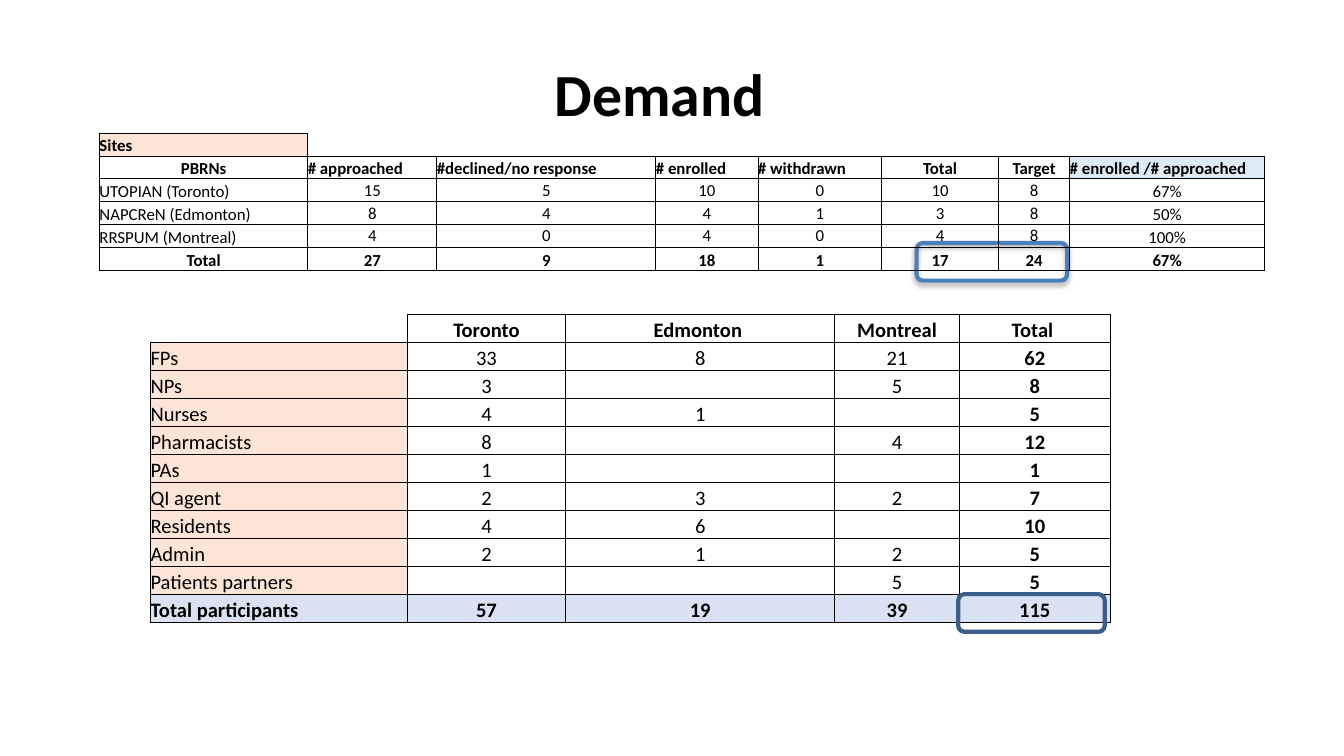
from dataclasses import dataclass

from lxml import etree
from pptx import Presentation
from pptx import util as u
from pptx.dml.color import RGBColor
from pptx.enum import shapes, text
from pptx.oxml import ns


@dataclass(frozen=True)
class Theme:
    font: str = "Calibri"
    ink: str = "000000"
    peach: str = "FCE4D6"
    sky: str = "DDEBF7"
    lavender: str = "D9E1F2"
    site_frame: str = "4B7EBC"
    people_frame: str = "3A5F8C"
    title_size: float = 32
    site_size: float = 9
    people_size: float = 11
    rule: float = 0.5
    frame_line: float = 2.25


THEME = Theme()
WIDTH = u.Inches(10)
HEIGHT = WIDTH * 9 // 16
LEFT, CENTER = text.PP_ALIGN.LEFT, text.PP_ALIGN.CENTER
MIDDLE, BOTTOM = text.MSO_ANCHOR.MIDDLE, text.MSO_ANCHOR.BOTTOM

# In each table None is an open cell outside the grid and "" an empty cell
SITE_COLUMNS = [1.55, 0.96, 1.63, 0.76, 0.92, 0.87, 0.53, 1.45]
SITES = [
    ["Sites"] + [None] * 7,
    ["PBRNs", "# approached", "#declined/no response", "# enrolled",
     "# withdrawn", "Total", "Target", "# enrolled /# approached"],
    ["UTOPIAN (Toronto)", "15", "5", "10", "0", "10", "8", "67%"],
    ["NAPCReN (Edmonton)", "8", "4", "4", "1", "3", "8", "50%"],
    ["RRSPUM (Montreal)", "4", "0", "4", "0", "4", "8", "100%"],
    ["Total", "27", "9", "18", "1", "17", "24", "67%"],
]
PEOPLE_COLUMNS = [1.91, 1.18, 2, 0.93, 1.12]
PEOPLE = [
    [None, "Toronto", "Edmonton ", "Montreal", "Total "],
    ["FPs", "33", "8", "21", "62"],
    ["NPs", "3", "", "5", "8"],
    ["Nurses", "4", "1", "", "5"],
    ["Pharmacists", "8", "", "4", "12"],
    ["PAs", "1", "", "", "1"],
    ["QI agent", "2", "3", "2", "7"],
    ["Residents", "4", "6", "", "10"],
    ["Admin", "2", "1", "2", "5"],
    ["Patients partners", "", "", "5", "5"],
    ["Total participants", "57", "19", "39", "115"],
]


def place(box):
    """Turn percentages of the slide into left, top, width, height."""
    sides = (WIDTH, HEIGHT, WIDTH, HEIGHT)
    return [round(side * share / 100) for side, share in zip(sides, box)]


def write(frame, words, size, bold=False, align=CENTER):
    paragraph = frame.paragraphs[0]
    paragraph.alignment = align
    if words:
        run = paragraph.add_run()
        run.text = words
        run.font.name, run.font.size, run.font.bold = THEME.font, u.Pt(size), bold
        run.font.color.rgb = RGBColor.from_string(THEME.ink)
    else:  # keeps an empty row as low as the others
        etree.SubElement(paragraph._p, ns.qn("a:endParaRPr"), sz=str(size * 100))


def draw_borders(cell, sides):
    """Rule the sides that are true, in the order left, right, top, bottom."""
    props = cell._tc.get_or_add_tcPr()
    for index, (side, ruled) in enumerate(zip("LRTB", sides)):
        line = etree.Element(ns.qn(f"a:ln{side}"), w=str(u.Pt(THEME.rule)))
        if ruled:
            fill = etree.SubElement(line, ns.qn("a:solidFill"))
            etree.SubElement(fill, ns.qn("a:srgbClr"), val=THEME.ink)
        else:
            etree.SubElement(line, ns.qn("a:noFill"))
        props.insert(index, line)


def draw_table(slide, box, rows, columns, size, style):
    """style(row, column, words) gives fill, bold, alignment and anchor."""
    left, top, width, height = place(box)
    table = slide.shapes.add_table(
        len(rows), len(columns), left, top, width, height).table
    table.first_row = table.horz_banding = False
    for column, share in zip(table.columns, columns):
        column.width = round(width * share / sum(columns))
    for row in table.rows:
        row.height = round(height / len(rows))

    def framed(r, c):
        inside = 0 <= r < len(rows) and 0 <= c < len(columns)
        return inside and rows[r][c] is not None

    for r, row in enumerate(rows):
        for c, words in enumerate(row):
            cell = table.cell(r, c)
            fill, bold, align, cell.vertical_anchor = style(r, c, words or "")
            cell.margin_left = cell.margin_right = 0
            cell.margin_top = cell.margin_bottom = 0
            if fill:
                cell.fill.solid()
                cell.fill.fore_color.rgb = RGBColor.from_string(fill)
            else:
                cell.fill.background()
            neighbours = [(r, c - 1), (r, c + 1), (r - 1, c), (r + 1, c)]
            draw_borders(cell, [framed(r, c) or framed(*n) for n in neighbours])
            write(cell.text_frame, words, size, bold, align)


def draw_frame(slide, box, color, shadow=False):
    frame = slide.shapes.add_shape(
        shapes.MSO_SHAPE.ROUNDED_RECTANGLE, *place(box))
    frame.shadow.inherit = False
    frame.fill.background()
    frame.line.color.rgb = RGBColor.from_string(color)
    frame.line.width = u.Pt(THEME.frame_line)
    if shadow:
        effects = frame._element.spPr.find(ns.qn("a:effectLst"))
        outer = etree.SubElement(
            effects, ns.qn("a:outerShdw"), blurRad=str(u.Pt(3.1)),
            dist=str(u.Pt(1.8)), dir="5400000", rotWithShape="0")
        shade = etree.SubElement(outer, ns.qn("a:srgbClr"), val=THEME.ink)
        etree.SubElement(shade, ns.qn("a:alpha"), val="35000")


def draw_title(slide, box):
    frame = slide.shapes.add_textbox(*place(box)).text_frame
    frame.word_wrap = True
    frame.vertical_anchor = MIDDLE
    write(frame, "Demand ", THEME.title_size, bold=True)


def draw_sites(slide, box):
    def style(r, c, words):
        header, total = r == 1, r == len(SITES) - 1
        body = not (r == 0 or header or total)
        last = c == len(SITE_COLUMNS) - 1
        fill = {(0, 0): THEME.peach, (1, 7): THEME.sky}.get((r, c))
        label = c == 0 and not (header or total)
        align = LEFT if label or words.startswith("#") else CENTER
        anchor = MIDDLE if body and c > 0 and not last else BOTTOM
        return fill, not body, align, anchor

    draw_table(slide, box, SITES, SITE_COLUMNS, THEME.site_size, style)


def draw_people(slide, box):
    def style(r, c, words):
        header, total = r == 0, r == len(PEOPLE) - 1
        last = c == len(PEOPLE_COLUMNS) - 1
        label_fill = THEME.peach if c == 0 and not header else None
        fill = THEME.lavender if total else label_fill
        return fill, header or total or last, CENTER if c else LEFT, BOTTOM

    draw_table(slide, box, PEOPLE, PEOPLE_COLUMNS, THEME.people_size, style)


def main():
    deck = Presentation()
    deck.slide_width, deck.slide_height = WIDTH, HEIGHT
    slide = deck.slides.add_slide(deck.slide_layouts[6])
    # Boxes are percentages of the slide: left, top, width, height
    draw_title(slide, (4.6, 3.9, 90, 16.7))
    # Enrolment by site, with the total against the target framed
    draw_frame(slide, (68.2, 32.15, 11.2, 4.98), THEME.site_frame, shadow=True)
    draw_sites(slide, (7.4, 17.6, 86.7, 18.2))
    # Participants by role, with the grand total framed
    draw_people(slide, (11.2, 41.65, 71.4, 40.75))
    draw_frame(slide, (71.3, 78.6, 10.9, 4.98), THEME.people_frame)
    deck.save("out.pptx")


if __name__ == "__main__":
    main()
